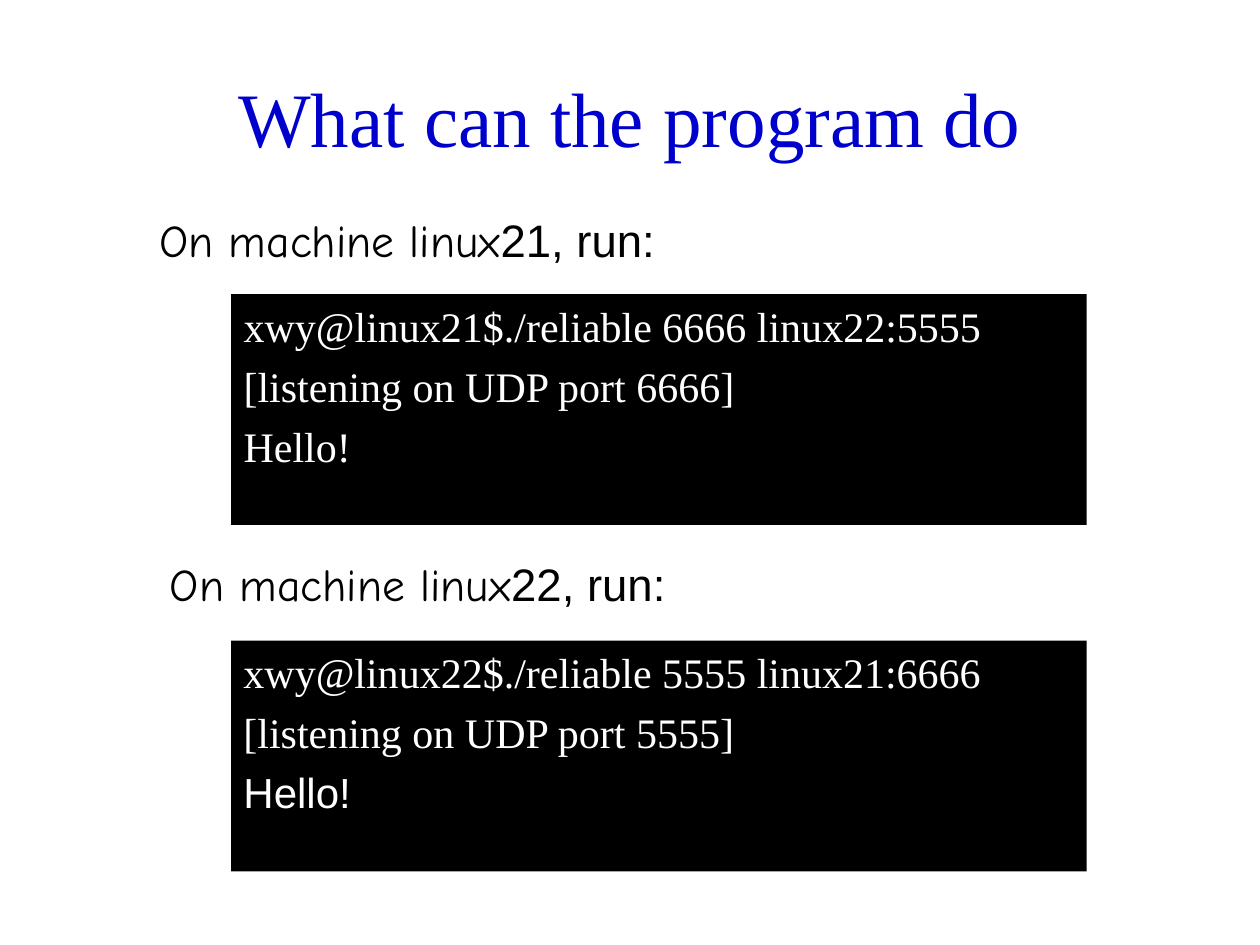
"""Build a slide showing two terminals that talk to each other over UDP."""
from pptx import Presentation
from pptx import util as u
from pptx.dml.color import RGBColor
from pptx.enum import shapes, text
from pptx.oxml.ns import qn
from lxml import etree

BLUE = RGBColor(0x00, 0x00, 0xCC)
BLACK = RGBColor(0x00, 0x00, 0x00)
WHITE = RGBColor(0xFF, 0xFF, 0xFF)
SERIF, SANS, HAND = "Times New Roman", "Arial", "Comic Neue"
GRID = u.Inches(1) / 12
HANG = u.Inches(0.38)


def place(box, left, top, width, height):
    box.left, box.top, box.width, box.height = (
        round(cells * GRID) for cells in (left, top, width, height))


def write(box, lines, size, color, align=text.PP_ALIGN.LEFT,
          anchor=text.MSO_ANCHOR.TOP, hanging=True, spacing=1.0):
    frame = box.text_frame
    frame.word_wrap = True
    frame.auto_size = text.MSO_AUTO_SIZE.NONE
    frame.vertical_anchor = anchor
    for index, spans in enumerate(lines):
        para = frame.paragraphs[0] if index == 0 else frame.add_paragraph()
        para.alignment = align
        para.line_spacing = spacing
        if hanging:
            para.space_before = u.Pt(size * 0.23)
            props = para._p.get_or_add_pPr()
            props.set("marL", str(HANG))
            props.set("indent", str(-HANG))
            etree.SubElement(props, qn("a:buNone"))
        for words, font in spans:
            span = para.add_run()
            span.text = words
            span.font.name = font
            span.font.size = u.Pt(size)
            span.font.color.rgb = color


deck = Presentation()
deck.slide_width, deck.slide_height = round(120 * GRID), round(90 * GRID)
page = deck.slides.add_slide(deck.slide_layouts[1])

title = page.shapes.title
place(title, 6, 3.6, 108, 15)
write(title, [[("What can the program do", SERIF)]], 44, BLUE,
      align=text.PP_ALIGN.CENTER, anchor=text.MSO_ANCHOR.MIDDLE, hanging=False)

second_console = page.shapes.add_shape(shapes.MSO_SHAPE.RECTANGLE, 0, 0, 0, 0)
second_console.shadow.inherit = False
second_console.line.fill.background()

machines = [
    (page.placeholders[1], 28, (21, 6666), (22, 5555), SERIF, (14, 20.6, 54, 5.4), 0.8),
    (second_console, 61, (22, 5555), (21, 6666), SANS, (15, 53, 57, 6), 0.9),
]
for console, top, (host, port), (peer, peer_port), font, label_area, spacing in machines:
    place(console, 22, top, 81.5, 22)
    console.fill.solid()
    console.fill.fore_color.rgb = BLACK
    write(console, [
        [(f"xwy@linux{host}$./reliable {port} linux{peer}:{peer_port}", SERIF)],
        [(f"[listening on UDP port {port}]", SERIF)],
        [("Hello!", font)],
    ], 24, WHITE)

    label = page.shapes.add_textbox(0, 0, 0, 0)
    place(label, *label_area)
    write(label, [[("On machine linux", HAND), (f"{host}, run:", SANS)]],
          26, BLACK, spacing=spacing)

deck.save("out.pptx")
